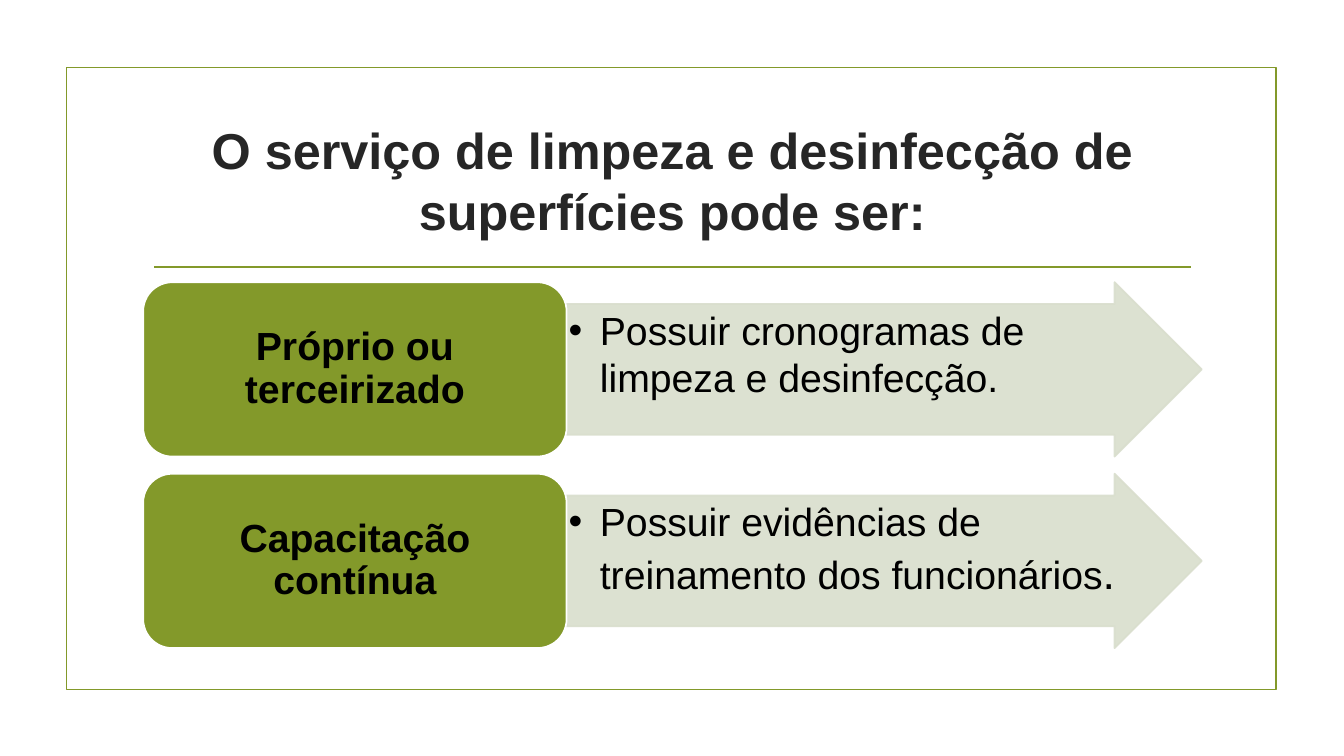
"""Build the slide on cleaning and disinfection services."""
from dataclasses import dataclass

from lxml import etree
from pptx import Presentation
from pptx.dml.color import RGBColor
from pptx.enum.shapes import MSO_CONNECTOR, MSO_SHAPE
from pptx.enum.text import MSO_ANCHOR, MSO_AUTO_SIZE, PP_ALIGN
from pptx.oxml.ns import qn
from pptx.shapes.autoshape import Shape
from pptx.slide import Slide
from pptx.text.text import TextFrame, _Paragraph
from pptx.util import Emu, Pt

EMU_PER_PX = 9144
RECTANGLE = MSO_SHAPE.RECTANGLE
ROUNDED = MSO_SHAPE.ROUNDED_RECTANGLE
ARROW = MSO_SHAPE.RIGHT_ARROW
STRAIGHT = MSO_CONNECTOR.STRAIGHT
MIDDLE, TOP = MSO_ANCHOR.MIDDLE, MSO_ANCHOR.TOP
CENTER, LEFT = PP_ALIGN.CENTER, PP_ALIGN.LEFT
NO_AUTOFIT = MSO_AUTO_SIZE.NONE


@dataclass(frozen=True)
class Theme:
    font: str = "Arial"
    olive: RGBColor = RGBColor(0x83, 0x99, 0x2A)
    sage: RGBColor = RGBColor(0xD9, 0xDE, 0xCD)
    white: RGBColor = RGBColor(0xFF, 0xFF, 0xFF)
    black: RGBColor = RGBColor(0, 0, 0)
    charcoal: RGBColor = RGBColor(0x26, 0x26, 0x26)
    heading_size: int = 36
    text_size: int = 28
    full_stop_size: int = 32
    line_width: float = 1.25
    sage_opacity: int = 90


@dataclass(frozen=True)
class Box:
    left: int
    top: int
    width: int
    height: int

    def emu(self) -> tuple[Emu, Emu, Emu, Emu]:
        return px(self.left), px(self.top), px(self.width), px(self.height)


@dataclass(frozen=True)
class Piece:
    text: str
    size: int
    bold: bool = False


@dataclass(frozen=True)
class Requirement:
    label: str
    detail: tuple[Piece, ...]


THEME = Theme()
HEADING = "O serviço de limpeza e desinfecção de superfícies pode ser:"
REQUIREMENTS = (
    Requirement(
        "Próprio ou terceirizado",
        (Piece("Possuir cronogramas de limpeza e desinfecção.", THEME.text_size),),
    ),
    Requirement(
        "Capacitação contínua",
        (
            Piece("Possuir evidências de treinamento dos funcionários", THEME.text_size),
            Piece(".", THEME.full_stop_size),
        ),
    ),
)
FIRST_ROW_TOP, ROW_PITCH, ROW_HEIGHT = 280, 190, 173
LABEL_LEFT, LABEL_WIDTH, ARROW_WIDTH = 142, 420, 630
BULLET_INDENT = 31


def px(length: int) -> Emu:
    return Emu(length * EMU_PER_PX)


def add_outlined(slide: Slide, kind: MSO_SHAPE, box: Box, outline: RGBColor) -> Shape:
    shape = slide.shapes.add_shape(kind, *box.emu())
    shape.shadow.inherit = False
    shape.fill.background()
    shape.line.color.rgb = outline
    shape.line.width = Pt(THEME.line_width)
    return shape


def fill_with(shape: Shape, color: RGBColor) -> None:
    shape.fill.solid()
    shape.fill.fore_color.rgb = color


def set_opacity(shape: Shape, percent: int) -> None:
    for color in shape.element.spPr.iter(qn("a:srgbClr")):
        etree.SubElement(color, qn("a:alpha")).set("val", str(percent * 1000))


def set_frame(frame: TextFrame, anchor: MSO_ANCHOR, insets: tuple[int, int, int, int]) -> None:
    frame.word_wrap = True
    frame.auto_size = NO_AUTOFIT
    frame.vertical_anchor = anchor
    frame.margin_left, frame.margin_top, frame.margin_right, frame.margin_bottom = map(px, insets)


def add_piece(paragraph: _Paragraph, piece: Piece, color: RGBColor) -> None:
    run = paragraph.add_run()
    run.text = piece.text
    run.font.name = THEME.font
    run.font.size = Pt(piece.size)
    run.font.bold = piece.bold
    run.font.color.rgb = color


def add_bullet(paragraph: _Paragraph) -> None:
    properties = paragraph._p.get_or_add_pPr()
    properties.set("marL", str(px(BULLET_INDENT)))
    properties.set("indent", str(-px(BULLET_INDENT)))
    etree.SubElement(properties, qn("a:buFont")).set("typeface", THEME.font)
    etree.SubElement(properties, qn("a:buChar")).set("char", "•")


def add_heading(slide: Slide) -> None:
    heading = slide.shapes.title
    heading.left, heading.top, heading.width, heading.height = Box(142, 107, 1050, 143).emu()
    set_frame(heading.text_frame, MIDDLE, (10, 5, 10, 5))
    paragraph = heading.text_frame.paragraphs[0]
    paragraph.alignment = CENTER
    add_piece(paragraph, Piece(HEADING, THEME.heading_size, True), THEME.charcoal)


def add_divider(slide: Slide) -> None:
    divider = slide.shapes.add_connector(STRAIGHT, px(153), px(265), px(1181), px(265))
    divider.line.color.rgb = THEME.olive
    divider.line.width = Pt(THEME.line_width)
    etree.SubElement(divider.element.spPr, qn("a:effectLst"))


def add_detail(slide: Slide, detail: tuple[Piece, ...], top: int) -> None:
    box = Box(LABEL_LEFT + LABEL_WIDTH, top, ARROW_WIDTH, ROW_HEIGHT)
    arrow = add_outlined(slide, ARROW, box, THEME.sage)
    arrow.adjustments[0] = 0.75
    arrow.adjustments[1] = 0.5
    fill_with(arrow, THEME.sage)
    set_opacity(arrow, THEME.sage_opacity)
    set_frame(arrow.text_frame, TOP, (2, 2, 2, 2))
    paragraph = arrow.text_frame.paragraphs[0]
    paragraph.alignment = LEFT
    add_bullet(paragraph)
    for piece in detail:
        add_piece(paragraph, piece, THEME.black)


def add_label(slide: Slide, label: str, top: int) -> None:
    box = Box(LABEL_LEFT, top, LABEL_WIDTH, ROW_HEIGHT)
    plate = add_outlined(slide, ROUNDED, box, THEME.white)
    fill_with(plate, THEME.olive)
    set_frame(plate.text_frame, MIDDLE, (12, 6, 12, 6))
    paragraph = plate.text_frame.paragraphs[0]
    paragraph.alignment = CENTER
    paragraph.line_spacing = 0.9
    add_piece(paragraph, Piece(label, THEME.text_size, True), THEME.black)


def main() -> None:
    deck = Presentation()
    deck.slide_width, deck.slide_height = px(1333), px(750)
    slide = deck.slides.add_slide(deck.slide_layouts.get_by_name("Title Only"))
    add_outlined(slide, RECTANGLE, Box(66, 67, 1200, 617), THEME.olive)
    add_divider(slide)
    add_heading(slide)
    for row, requirement in enumerate(REQUIREMENTS):
        top = FIRST_ROW_TOP + row * ROW_PITCH
        add_detail(slide, requirement.detail, top)
        add_label(slide, requirement.label, top)
    deck.save("out.pptx")


if __name__ == "__main__":
    main()
